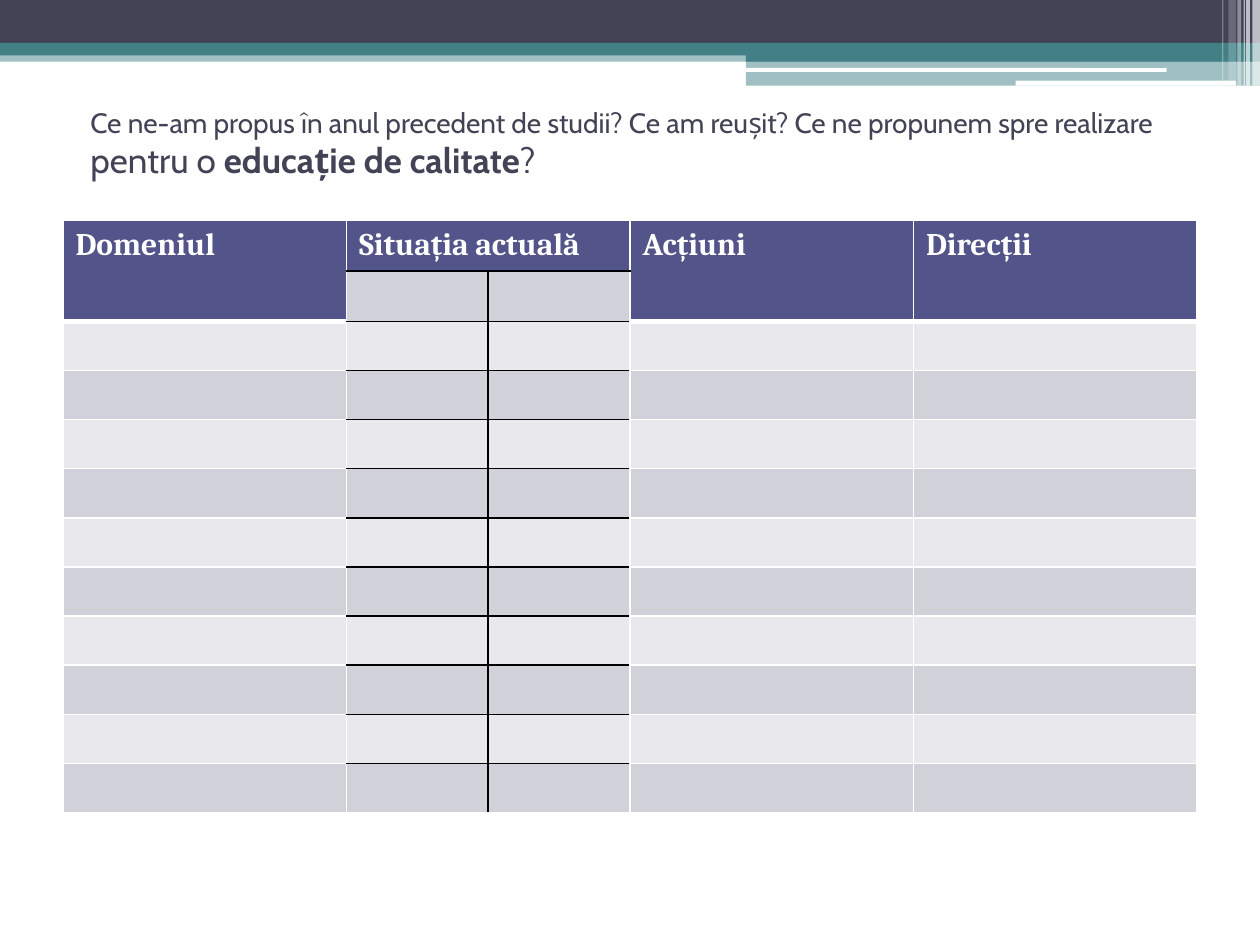
from pptx import Presentation
from pptx.dml.color import RGBColor
from pptx.enum.shapes import MSO_SHAPE
from pptx.enum.text import MSO_ANCHOR
from pptx.util import Inches, Pt
from lxml.etree import SubElement
from pptx.oxml.ns import qn

DARK, TEAL, WHITE, BLACK = "424456", "438086", "FFFFFF", "000000"
HEAD, LIGHT, DEEP = "53548A", "E9E9ED", "D1D1DA"

# Banner: left, top, width, height, colour, opacity in percent
BANDS = [
    (0, 0.4, 10, 0.09, TEAL, 50),
    (0, 0, 10, 0.34, DARK, 100),
    (0, 0.34, 10, 0.1, TEAL, 100),
    (5.92, 0.39, 4.08, 0.1, TEAL, 100),
    (5.92, 0.48, 4.08, 0.2, TEAL, 50),
]
PILLS = [(5.91, 0.54, 3.35, 0.03, WHITE, 100), (8.06, 0.64, 1.75, 0.04, WHITE, 100)]
# Stripes at the right edge: left, width, height, opacity
STRIPES = [
    (9.94, 0.06, 0.68, 65), (9.89, 0.03, 0.68, 65), (9.87, 0.01, 0.68, 60),
    (9.82, 0.03, 0.68, 40), (9.75, 0.06, 0.64, 20), (9.7, 0.01, 0.64, 30),
]
# Title runs: text, size, bold
TITLE = [
    ("Ce ne-am propus în anul precedent de studii? Ce am reușit? "
     "Ce ne propunem spre realizare ", 16, False),
    ("pentru o ", 20, False),
    ("educație de calitate", 20, True),
    ("?", 20, False),
]
# Header cells: column, text, rows spanned, columns spanned
HEADS = [(0, "Domeniul", 2, 1), (1, "Situația actuală", 1, 2),
         (3, "Acțiuni", 2, 1), (4, "Direcții", 2, 1)]
WIDTHS = [2.25, 1.125, 1.125, 2.25, 2.25]
ROWS, ROW_H = 12, 0.39
SPLIT = (1, 2)  # columns under the split header


def rgb(code):
    return RGBColor.from_string(code)


def band(slide, kind, left, top, width, height, color, alpha):
    shape = slide.shapes.add_shape(
        kind, Inches(left), Inches(top), Inches(width), Inches(height))
    shape.shadow.inherit = False
    shape.line.fill.background()
    shape.fill.solid()
    shape.fill.fore_color.rgb = rgb(color)
    if alpha < 100:
        tone = shape.fill._xPr.find(".//" + qn("a:srgbClr"))
        SubElement(tone, qn("a:alpha"), val=str(alpha * 1000))


def edge(cell, **sides):
    props = cell._tc.get_or_add_tcPr()
    for spot, side in enumerate("LRTB"):
        color, width = sides[side]
        line = SubElement(props, qn("a:ln" + side), w=str(Pt(width)))
        fill = SubElement(line, qn("a:solidFill"))
        SubElement(fill, qn("a:srgbClr"), val=color)
        props.remove(line)
        props.insert(spot, line)  # borders come before the fill


def paint(cell, row, col):
    header = row == 0 or (row == 1 and col not in SPLIT)
    cell.fill.solid()
    cell.fill.fore_color.rgb = rgb(HEAD if header else DEEP if row % 2 else LIGHT)
    white, black = (WHITE, 1), (BLACK, 1)
    split = col in SPLIT
    last = row == ROWS - 1
    thick = (WHITE, 3)
    edge(cell,
         L=black if col == 2 and row else white,
         R=black if col == 1 and row else white,
         T=black if split and row else thick if row == 2 else white,
         B=black if split and not last else thick if row < 2 and not split else white)
    if row:
        # keeps empty rows from growing
        cell.margin_top = cell.margin_bottom = Inches(0.03)


def main():
    deck = Presentation()
    deck.slide_width, deck.slide_height = Inches(10), Inches(7.5)
    slide = deck.slides.add_slide(deck.slide_layouts[6])

    # Banner
    for item in BANDS:
        band(slide, MSO_SHAPE.RECTANGLE, *item)
    for item in PILLS:
        band(slide, MSO_SHAPE.ROUNDED_RECTANGLE, *item)
    for left, width, height, alpha in STRIPES:
        band(slide, MSO_SHAPE.RECTANGLE, left, 0, width, height, WHITE, alpha)

    # Title
    frame = slide.shapes.add_textbox(
        Inches(0.62), Inches(0.55), Inches(8.84), Inches(1.17)).text_frame
    frame.word_wrap = True
    frame.vertical_anchor = MSO_ANCHOR.MIDDLE
    para = frame.paragraphs[0]
    para.font.name = "Cabin"
    para.font.color.rgb = rgb(DARK)
    for text, size, bold in TITLE:
        run = para.add_run()
        run.text = text
        run.font.size = Pt(size)
        run.font.bold = bold

    # Table
    table = slide.shapes.add_table(
        ROWS, len(WIDTHS), Inches(0.5), Inches(1.75),
        Inches(sum(WIDTHS)), Inches(ROWS * ROW_H)).table
    for col, width in enumerate(WIDTHS):
        table.columns[col].width = Inches(width)
    for row in range(ROWS):
        table.rows[row].height = Inches(ROW_H)
        for col in range(len(WIDTHS)):
            paint(table.cell(row, col), row, col)
    for col, text, down, across in HEADS:
        cell = table.cell(0, col)
        cell.merge(table.cell(down - 1, col + across - 1))
        cell.text = text
        font = cell.text_frame.paragraphs[0].font
        font.name, font.size, font.bold = "Cambria", Pt(18), True
        font.color.rgb = rgb(WHITE)

    deck.save("out.pptx")


if __name__ == "__main__":
    main()
